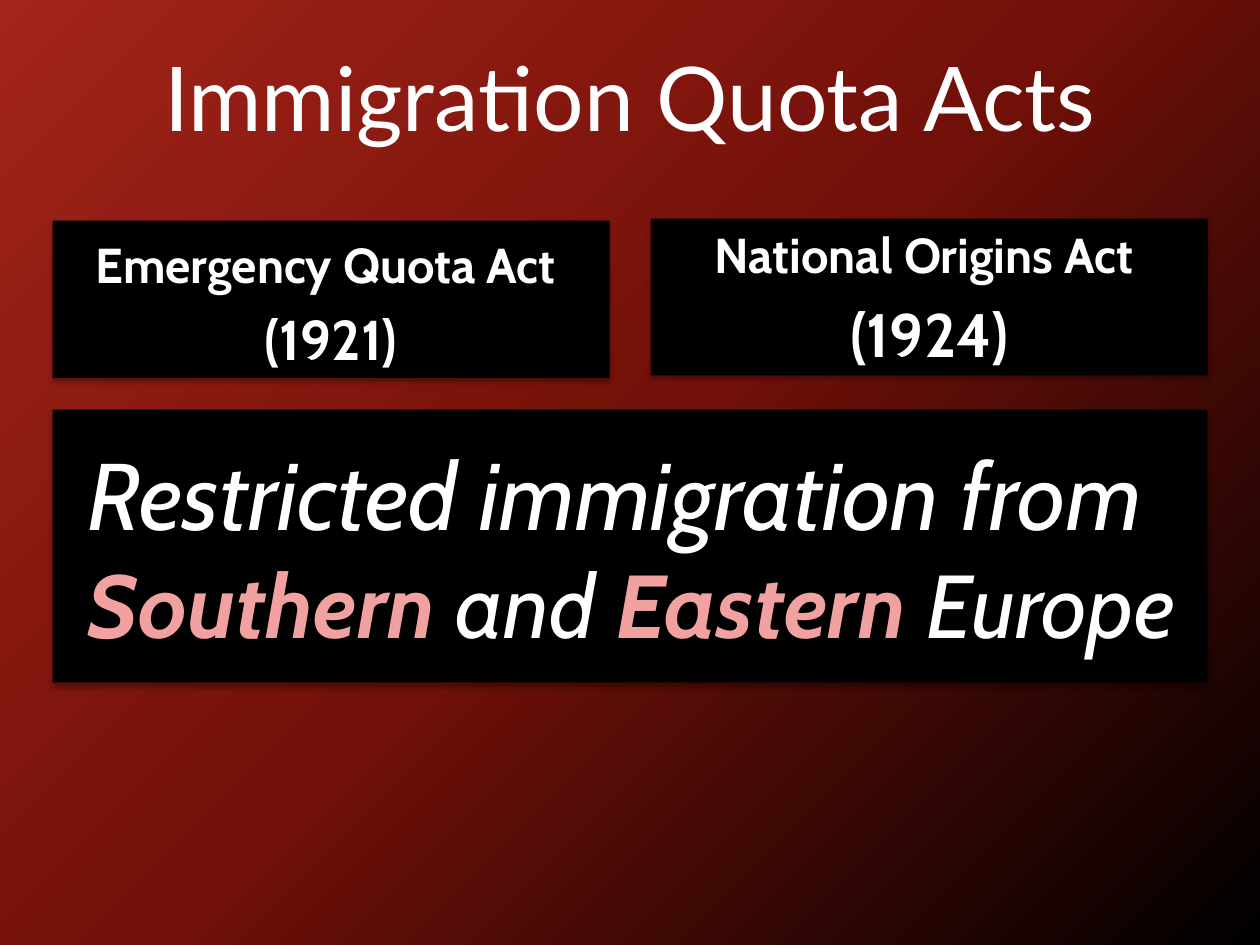
from dataclasses import dataclass

import lxml.etree
import pptx
import pptx.dml.color
import pptx.enum.shapes
import pptx.enum.text
import pptx.oxml
import pptx.oxml.ns
import pptx.util

Cm, Pt = pptx.util.Cm, pptx.util.Pt
ALIGN = pptx.enum.text.PP_ALIGN
ANCHOR = pptx.enum.text.MSO_ANCHOR
HUES = {"black": "000000", "deep": "711009", "red": "A3241A",
        "white": "FFFFFF", "pink": "F2A1A1"}
STOPS = [(0, "black"), (50, "deep"), (100, "red")]


@dataclass
class Run:
    text: str
    size: float
    hue: str = "white"
    bold: bool = False
    italic: bool = False
    face: str = "Cabin"


@dataclass
class Box:
    left: float
    top: float
    width: float
    height: float
    lines: list[list[Run]]
    anchor: ANCHOR = ANCHOR.BOTTOM
    align: ALIGN = ALIGN.CENTER
    indent: float = 0
    panel: bool = True


def color(hue: str) -> pptx.dml.color.RGBColor:
    return pptx.dml.color.RGBColor.from_string(HUES[hue])


def node(root, tag: str, **attrs):
    item = lxml.etree.SubElement(root, pptx.oxml.ns.qn(tag))
    for key, value in attrs.items():
        item.set(key, str(value))
    return item


def set_all(item, values: dict) -> None:
    for key, value in values.items():
        setattr(item, key, value)


def paint(slide) -> None:
    fill = slide.background.fill
    fill.gradient()
    fill.gradient_angle = 135
    stops = slide.background._cSld.find(".//" + pptx.oxml.ns.qn("a:gsLst"))
    for stop in list(stops):
        stops.remove(stop)
    for place, hue in STOPS:
        stop = node(stops, "a:gs", pos=place * 1000)
        node(stop, "a:srgbClr", val=HUES[hue])


def shade(shape) -> None:
    shape.shadow.inherit = False
    root = shape._element.spPr.find(pptx.oxml.ns.qn("a:effectLst"))
    glow = node(root, "a:outerShdw", blurRad=Pt(3.1), dist=Pt(1.8),
                dir=5400000, rotWithShape=0)
    tint = node(glow, "a:srgbClr", val=HUES["black"])
    node(tint, "a:alpha", val=35000)


def draw(slide, box: Box) -> None:
    area = [Cm(n) for n in (box.left, box.top, box.width, box.height)]
    if box.panel:
        shape = slide.shapes.add_shape(
            pptx.enum.shapes.MSO_SHAPE.RECTANGLE, *area)
        shape.fill.solid()
        shape.fill.fore_color.rgb = color("black")
        shape.line.fill.background()
        shade(shape)
    else:
        shape = slide.shapes.add_textbox(*area)
    frame = shape.text_frame
    set_all(frame, {"word_wrap": True, "vertical_anchor": box.anchor})
    for i, line in enumerate(box.lines):
        para = frame.add_paragraph() if i else frame.paragraphs[0]
        gap = Pt(line[0].size * 0.2) if i else Pt(0)
        set_all(para, {"alignment": box.align, "space_before": gap})
        if box.indent:
            props = para._p.get_or_add_pPr()
            props.set("marL", str(Cm(box.indent)))
            props.set("indent", "0")
        for part in line:
            run = para.add_run()
            run.text = part.text
            set_all(run.font, {"name": part.face, "size": Pt(part.size),
                               "bold": part.bold, "italic": part.italic})
            run.font.color.rgb = color(part.hue)


def act(left: float, top: float, height: float,
        name: str, year: str, size: float) -> Box:
    return Box(left, top, 11.23, height,
               [[Run(name, 28, bold=True)], [Run(year, size, bold=True)]])


BOXES = [
    Box(0, 0.2, 25.4, 3.48,
        [[Run("Immigration Quota Acts", 51, face="Lato")]],
        anchor=ANCHOR.MIDDLE, panel=False),
    act(1.06, 4.45, 3.17, "Emergency Quota Act ", "(1921)", 32),
    act(13.12, 4.41, 3.16, "National Origins Act ", "(1924)", 35),
    Box(1.06, 8.26, 23.28, 5.5,
        [[Run("Restricted immigration from ", 54, italic=True),
          Run("Southern ", 51, "pink", True, True),
          Run("and ", 51, italic=True),
          Run("Eastern ", 51, "pink", True, True),
          Run("Europe", 51, italic=True)]],
        anchor=ANCHOR.MIDDLE, align=ALIGN.LEFT, indent=0.46),
]


def main() -> None:
    deck = pptx.Presentation()
    set_all(deck, {"slide_width": Cm(25.4), "slide_height": Cm(19.05)})
    slide = deck.slides.add_slide(deck.slide_layouts[6])
    paint(slide)
    for box in BOXES:
        draw(slide, box)
    deck.save("out.pptx")


if __name__ == "__main__":
    main()
